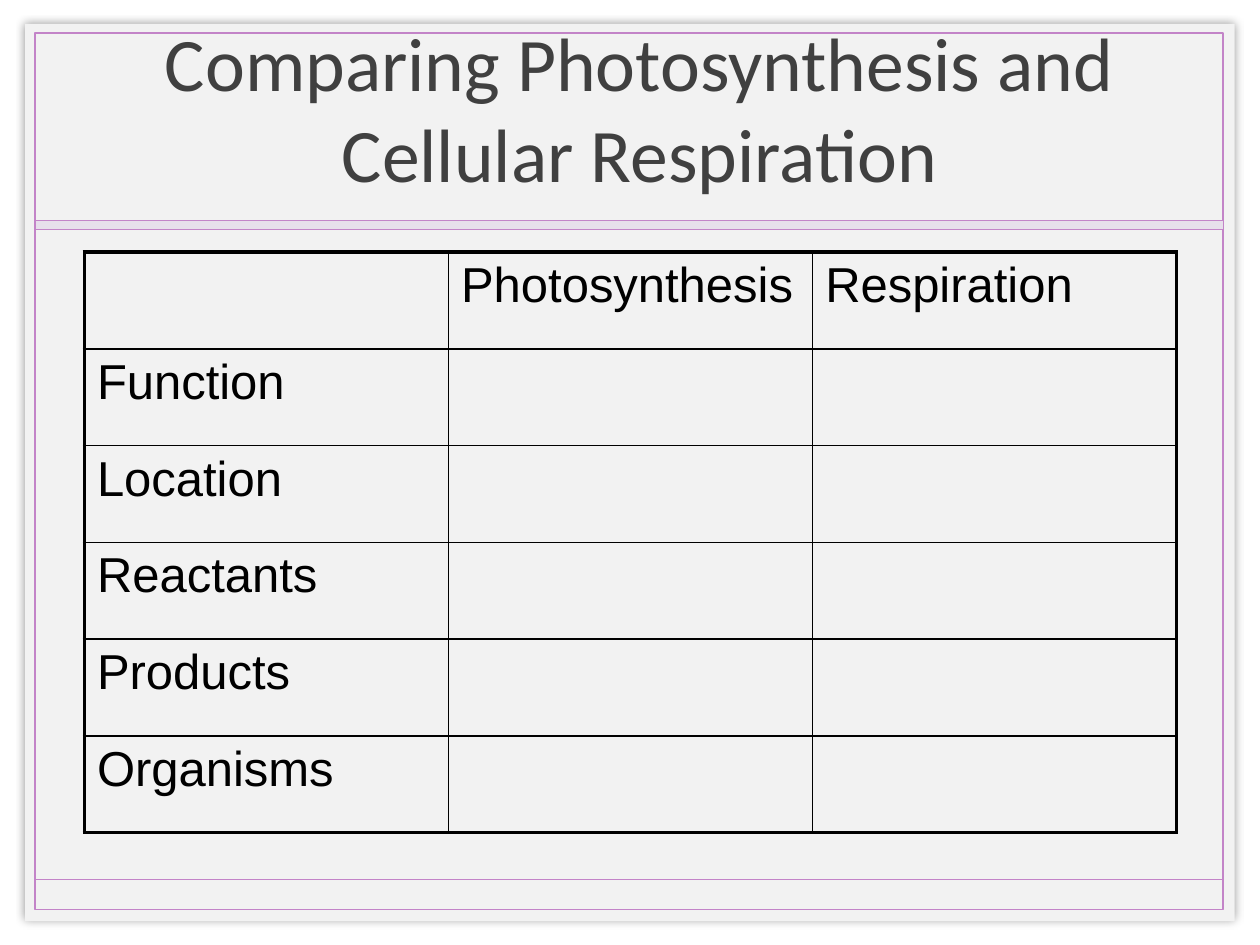
from lxml.etree import SubElement
from pptx import Presentation
from pptx.dml.color import RGBColor
from pptx.enum.shapes import MSO_CONNECTOR, MSO_SHAPE
from pptx.enum.text import MSO_ANCHOR, PP_ALIGN
from pptx.oxml import parse_xml
from pptx.oxml.ns import nsdecls, qn
from pptx.util import Inches, Pt

LILAC = "C384C8"
HEADS = ["", "Photosynthesis", "Respiration"]
TOPICS = ["Function", "Location", "Reactants", "Products", "Organisms"]


def color(code):
    """Turn a hex string into a colour."""
    return RGBColor.from_string(code)


def style(frame, font, size, code):
    """Format every run of a text frame."""
    for para in frame.paragraphs:
        for run in para.runs:
            run.font.name = font
            run.font.size = Pt(size)
            run.font.color.rgb = color(code)


def add_box(slide, place, fill=None, line=None, width=1):
    """Add a plain rectangle."""
    box = slide.shapes.add_shape(MSO_SHAPE.RECTANGLE, *map(Inches, place))
    box.shadow.inherit = False
    if fill:
        box.fill.solid()
        box.fill.fore_color.rgb = color(fill)
    else:
        box.fill.background()
    if line:
        box.line.color.rgb = color(line)
        box.line.width = Pt(width)
    else:
        box.line.fill.background()
    return box


def add_glow(box, blur, alpha):
    """Give a box a soft black shadow on all sides."""
    effects = box._element.spPr.find(qn("a:effectLst"))
    shade = SubElement(effects, qn("a:outerShdw"), blurRad=str(Pt(blur)),
                       dist="0", dir="0", algn="ctr", rotWithShape="0")
    black = SubElement(shade, qn("a:srgbClr"), val="000000")
    SubElement(black, qn("a:alpha"), val=str(alpha * 1000))


def add_rule(slide, left, right, top):
    """Add a thin horizontal line."""
    rule = slide.shapes.add_connector(
        MSO_CONNECTOR.STRAIGHT, Inches(left), Inches(top), Inches(right), Inches(top))
    rule.line.color.rgb = color(LILAC)
    rule.line.width = Pt(1)
    SubElement(rule._element.spPr, qn("a:effectLst"))


def add_title(slide, text):
    """Add the centred heading."""
    box = slide.shapes.add_textbox(Inches(0.35), Inches(0.06), Inches(9.45), Inches(1.57))
    frame = box.text_frame
    frame.word_wrap = True
    frame.vertical_anchor = MSO_ANCHOR.MIDDLE
    frame.text = text
    frame.paragraphs[0].alignment = PP_ALIGN.CENTER
    style(frame, "Calibri", 43.2, "404040")


def set_edges(cell, outer):
    """Draw the four cell borders, thick where the edge is an outer one."""
    props = cell._tc.get_or_add_tcPr()
    for spot, side in enumerate("LRTB"):
        width = Pt(2.25 if side in outer else 1)
        props.insert(spot, parse_xml(
            f'<a:ln{side} {nsdecls("a")} w="{width}"><a:solidFill>'
            f'<a:srgbClr val="000000"/></a:solidFill></a:ln{side}>'))


def add_grid(slide, rows):
    """Add the comparison table."""
    last, end = len(rows) - 1, len(rows[0]) - 1
    table = slide.shapes.add_table(
        last + 1, end + 1, Inches(0.67), Inches(2), Inches(8.67), Inches(4.61)).table
    table.first_row = table.horz_banding = False
    for r, row in enumerate(rows):
        for c, text in enumerate(row):
            cell = table.cell(r, c)
            cell.fill.background()
            cell.text = text
            style(cell.text_frame, "Arial", 28, "000000")
            outer = {"L": c == 0, "R": c == end, "T": r == 0, "B": r == last}
            set_edges(cell, [side for side in outer if outer[side]])


def main():
    """Build and save the slide."""
    deck = Presentation()
    deck.slide_width, deck.slide_height = Inches(10), Inches(7.5)
    slide = deck.slides.add_slide(deck.slide_layouts[6])
    add_glow(add_box(slide, (0.2, 0.19, 9.6, 7.12), "F2F2F2"), 5, 40)
    add_box(slide, (0.28, 0.26, 9.43, 6.96), line=LILAC)
    add_rule(slide, 0.28, 9.71, 6.98)
    add_box(slide, (0.28, 1.75, 9.43, 0.07), "E7DFEB", LILAC, 0.25)
    add_grid(slide, [HEADS] + [[topic, "", ""] for topic in TOPICS])
    add_title(slide, "Comparing Photosynthesis and Cellular Respiration")
    deck.save("out.pptx")


if __name__ == "__main__":
    main()
